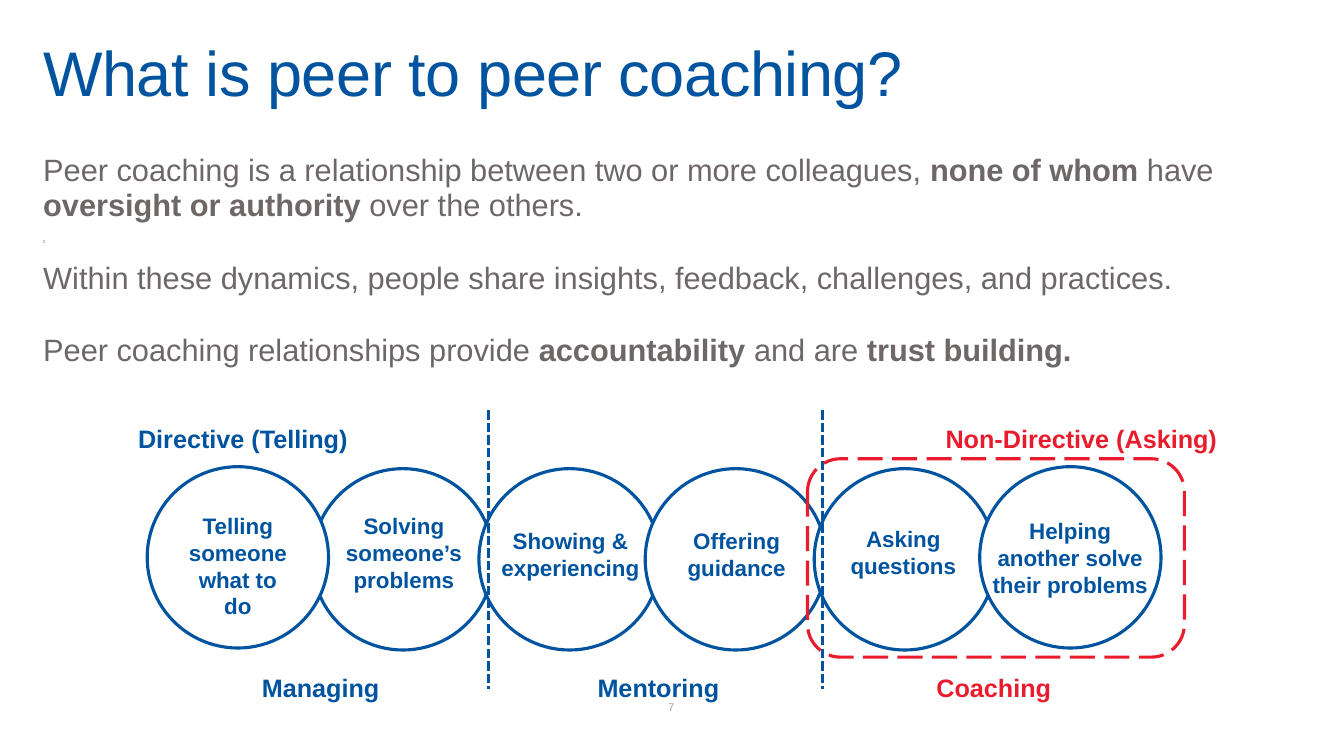
from lxml import etree
from pptx import Presentation
from pptx import util as u
from pptx.dml.color import RGBColor
from pptx.enum import dml, shapes, text
from pptx.oxml import ns

BLUE = RGBColor(0x00, 0x53, 0x9F)
RED = RGBColor(0xE8, 0x1C, 0x2D)
GREY = RGBColor(0x6E, 0x67, 0x67)
PALE = RGBColor(0xA9, 0xA3, 0xA3)
WHITE = RGBColor(0xFF, 0xFF, 0xFF)
LEFT, MID = text.PP_ALIGN.LEFT, text.PP_ALIGN.CENTER

deck = Presentation()
deck.slide_width, deck.slide_height = u.Cm(33.87), u.Cm(19.05)
slide = deck.slides.add_slide(deck.slide_layouts[6])


def frame(x, y, w, h):
    """Add a wrapping text box without margins and return its frame."""
    tf = slide.shapes.add_textbox(u.Cm(x), u.Cm(y), u.Cm(w), u.Cm(h)).text_frame
    tf.word_wrap = True
    tf.margin_left = tf.margin_top = tf.margin_right = tf.margin_bottom = 0
    return tf


def write(para, words, size=16, tint=BLUE, bold=False, align=MID,
          lead=1.0, before=0, after=0, track=0):
    """Fill a paragraph; words between asterisks turn bold."""
    para.alignment, para.line_spacing = align, lead
    para.space_before, para.space_after = u.Pt(before), u.Pt(after)
    for i, part in enumerate(words.split("*")):
        if not part:
            continue
        run = para.add_run()
        run.text = part
        font = run.font
        font.name, font.size, font.bold = "Arial", u.Pt(size), bold or i % 2 == 1
        font.color.rgb = tint
        if track:
            font._element.set("spc", str(track))


# Slide number and title
write(frame(16.23, 17.65, 1.37, 0.33).paragraphs[0], "7", size=8, tint=PALE)
head = frame(1.09, 0.94, 31.67, 1.83)
head.vertical_anchor = text.MSO_ANCHOR.BOTTOM
write(head.paragraphs[0], "What is peer to peer coaching?", size=45,
      align=LEFT, lead=0.9, track=-30)

# Body: words, size, space before
body = frame(1.09, 3.86, 31.04, 10.24)
lines = [
    ("Peer coaching is a relationship between two or more colleagues, "
     "*none of whom *have *oversight or authority *over the others.", 22, 0),
    ("2", 3, 0),
    ("Within these dynamics, people share insights, feedback, challenges, "
     "and practices.", 22, 0),
    ("Peer coaching relationships provide *accountability *and are "
     "*trust building.*", 22, 14),
]
for i, (words, size, before) in enumerate(lines):
    para = body.add_paragraph() if i else body.paragraphs[0]
    write(para, words, size=size, tint=GREY, align=LEFT, lead=0.95,
          before=before, after=12)

# Circles, the first one on top of the chain
for x, y in [(7.87, 11.81), (12.07, 11.81), (16.26, 11.81),
             (20.52, 11.81), (24.69, 11.76), (3.71, 11.76)]:
    ring = slide.shapes.add_shape(shapes.MSO_SHAPE.OVAL, u.Cm(x), u.Cm(y),
                                  u.Cm(4.57), u.Cm(4.57))
    ring.shadow.inherit = False
    ring.fill.solid()
    ring.fill.fore_color.rgb = WHITE
    ring.line.color.rgb, ring.line.width = BLUE, u.Pt(2.25)

# Circle labels
for words, x, y, w, h in [
    ("Telling someone what to do", 4.6, 12.9, 2.79, 2.74),
    ("Solving someone’s problems", 8.59, 12.9, 3.18, 2.06),
    ("Showing & experiencing", 12.57, 13.28, 3.61, 1.37),
    ("Offering guidance", 16.76, 13.28, 3.61, 1.37),
    ("Asking questions", 20.96, 13.23, 3.61, 1.37),
    ("Helping another solve their problems", 24.94, 13.03, 4.06, 2.06),
]:
    write(frame(x, y, w, h).paragraphs[0], words, bold=True)

# Captions above and below the chain
for words, x, y, tint in [
    ("Non-Directive (Asking)", 23.83, 10.67, RED),
    ("Directive (Telling)", 3.48, 10.67, BLUE),
    ("Coaching", 23.6, 16.94, RED),
    ("Mentoring", 15.06, 16.94, BLUE),
    ("Managing", 6.6, 16.94, BLUE),
]:
    write(frame(x, y, 7.11, 0.76).paragraphs[0], words, size=18, tint=tint,
          bold=True, align=LEFT)

# Dividers between the three styles
for x in (20.73, 12.32):
    bar = slide.shapes.add_connector(shapes.MSO_CONNECTOR.STRAIGHT, u.Cm(x),
                                     u.Cm(10.34), u.Cm(x), u.Cm(17.35))
    bar.line.color.rgb, bar.line.width = BLUE, u.Pt(2.25)
    bar.line.dash_style = dml.MSO_LINE.SQUARE_DOT
    etree.SubElement(bar._element.spPr, ns.qn("a:effectLst"))

# Dashed frame around coaching
zone = slide.shapes.add_shape(shapes.MSO_SHAPE.ROUNDED_RECTANGLE, u.Cm(20.35),
                              u.Cm(11.56), u.Cm(9.5), u.Cm(5))
zone.shadow.inherit = False
zone.fill.background()
zone.line.color.rgb, zone.line.width = RED, u.Pt(2.25)
zone.line.dash_style = dml.MSO_LINE.LONG_DASH

deck.save("out.pptx")
